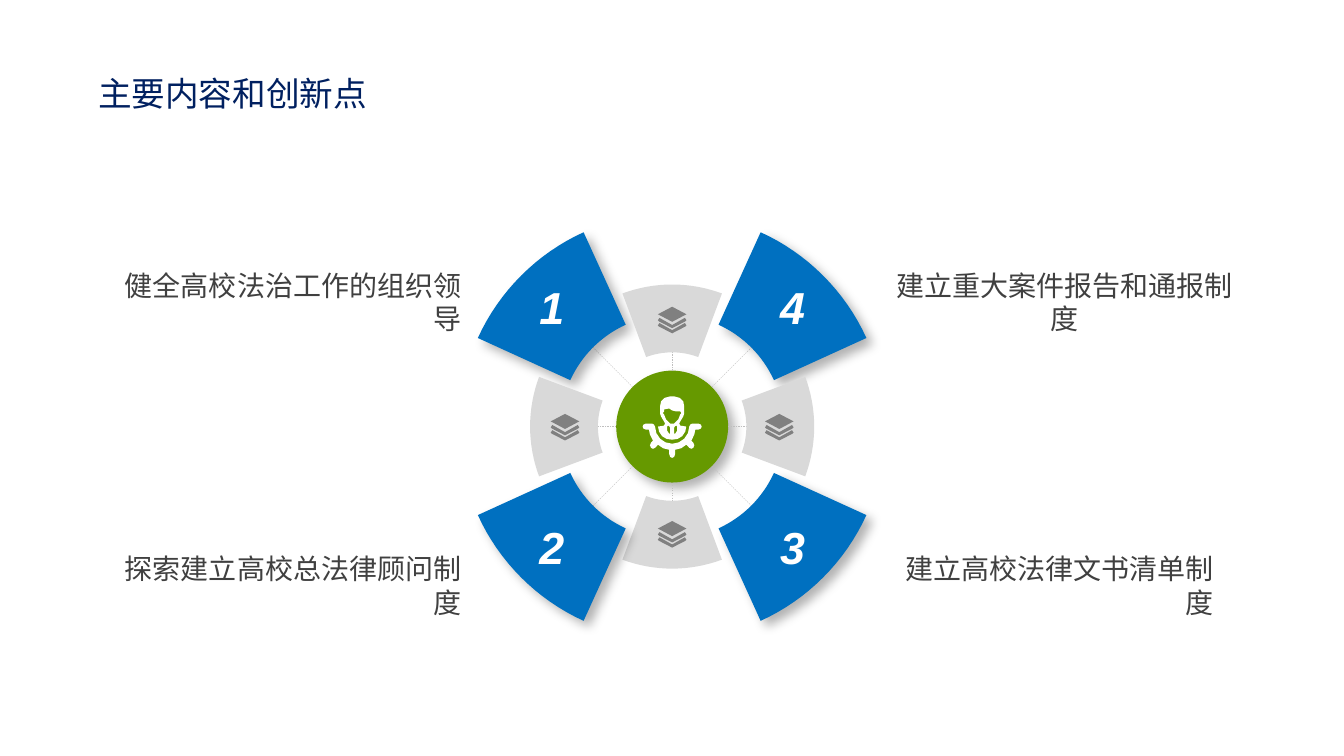
import math
from dataclasses import dataclass

from lxml import etree
from pptx import Presentation
from pptx.dml.color import RGBColor
from pptx.enum import dml, shapes, text
from pptx.oxml import parse_xml
from pptx.oxml.ns import nsdecls, qn
from pptx.util import Cm, Pt

NAVY = RGBColor(0x00, 0x20, 0x60)
BLUE = RGBColor(0x00, 0x70, 0xC0)
GREEN = RGBColor(0x66, 0x99, 0x00)
WHITE = RGBColor(0xFF, 0xFF, 0xFF)
LIGHT_GREY = RGBColor(0xD9, 0xD9, 0xD9)
LINE_GREY = RGBColor(0xBF, 0xBF, 0xBF)
ICON_GREY = RGBColor(0x80, 0x80, 0x80)
TEXT_GREY = RGBColor(0x40, 0x40, 0x40)
CHINESE_FONT = "Noto Sans CJK SC"

# Lengths in centimetres, angles in degrees clockwise from the right
CENTER_X, CENTER_Y = 16.94, 10.75
HUB_RADIUS = 1.41
ICON_RADIUS = 2.7
HALF_ANGLE = 20.5
ARC_STEPS = 16
PILOT_UNIT = 0.0254

Point = tuple[float, float]


@dataclass
class Segment:
    angle: float
    number: str = ""

    @property
    def radii(self) -> Point:
        return (2.82, 5.38) if self.number else (1.87, 3.58)


@dataclass
class Caption:
    words: str
    left: float
    top: float
    width: float
    alignment: text.PP_ALIGN


SEGMENTS = [
    Segment(90), Segment(45, "3"), Segment(135, "2"), Segment(315, "4"),
    Segment(225, "1"), Segment(270), Segment(0), Segment(180),
]
CAPTIONS = [
    Caption("建立重大案件报告和通报制度", 22.01, 6.63, 9.65, text.PP_ALIGN.CENTER),
    Caption("健全高校法治工作的组织领导", 2.23, 6.63, 9.65, text.PP_ALIGN.RIGHT),
    Caption("建立高校法律文书清单制度", 21.89, 13.77, 8.95, text.PP_ALIGN.RIGHT),
    Caption("探索建立高校总法律顾问制度", 2.23, 13.77, 9.65, text.PP_ALIGN.RIGHT),
]

CHEVRON = [(-0.32, -0.04), (0, 0.14), (0.32, -0.04), (0.36, 0.02),
           (0.33, 0.05), (0, 0.22), (-0.33, 0.05), (-0.36, 0.02)]
LAYERS = [
    [(0, -0.32), (0.36, -0.13), (0, 0.06), (-0.36, -0.13)],
    CHEVRON,
    [(x, y + 0.13) for x, y in CHEVRON],
]

# Right halves of the pilot icon, top to bottom
WHEEL_HALF = [
    (0, 17), (6.5, 15.7), (12, 12), (15.7, 6.5), (17, 0), (18, -2), (20, -3),
    (26, -3), (28.5, -2), (29.3, 0), (28.5, 2), (26, 3), (23, 3), (22, 8),
    (19, 14), (21, 16), (22, 18.5), (21, 21), (19, 22), (17, 21), (14, 18),
    (9, 21.5), (3, 23), (3, 27), (2, 30), (0, 31),
]
BODY_HALF = [
    (0, -30), (2, -30), (7.5, -28.5), (11, -25), (12, -20), (12, -13),
    (11, -10), (8, -5), (7, -3), (8, -1), (14, 0), (13, 5), (10, 9.5),
    (5.5, 12.2), (0, 13),
]
FACE = [
    (-3, -18), (-8, -17), (-8, -15), (-9, -14), (-9, -13), (-8, -12), (-6, -7),
    (-2, -3), (2, -3), (6, -7), (8, -12), (9, -13), (9, -14), (8, -15),
    (4, -15), (0, -16),
]
LAPEL = [(2, 1), (3, -0.5), (4, -1), (5, 0), (5, 4), (3, 7), (2, 7)]


def mirrored(points: list[Point]) -> list[Point]:
    return [(-x, y) for x, y in reversed(points)]


def polar(radius: float, angle: float) -> Point:
    """Offset from the centre of the wheel."""
    radians = math.radians(angle)
    return radius * math.cos(radians), radius * math.sin(radians)


def arc(radius: float, start: float, end: float) -> list[Point]:
    step = (end - start) / ARC_STEPS
    return [polar(radius, start + step * i) for i in range(ARC_STEPS + 1)]


def paint(shape, color: RGBColor, shadow: bool = False) -> None:
    shape.fill.solid()
    shape.fill.fore_color.rgb = color
    shape.line.fill.background()
    shape.shadow.inherit = False
    if shadow:
        effects = shape.element.spPr.find(qn("a:effectLst"))
        effects.append(parse_xml(
            f'<a:outerShdw {nsdecls("a")} blurRad="{Pt(8)}" dist="{Pt(6)}" '
            'dir="2700000" algn="tl" rotWithShape="0"><a:srgbClr val="000000">'
            '<a:alpha val="30000"/></a:srgbClr></a:outerShdw>'))


def draw_outline(slide, contours: list[list[Point]], offset: Point = (0, 0)):
    """Draw closed contours placed relative to the wheel centre."""
    def placed(point: Point) -> Point:
        return (Cm(CENTER_X + offset[0] + point[0]),
                Cm(CENTER_Y + offset[1] + point[1]))

    first, *others = contours
    builder = slide.shapes.build_freeform(*placed(first[0]))
    builder.add_line_segments([placed(point) for point in first[1:]])
    for contour in others:
        builder.move_to(*placed(contour[0]))
        builder.add_line_segments([placed(point) for point in contour[1:]])
    return builder.convert_to_shape()


def format_text(paragraph, size: int, color: RGBColor, font: str,
                alignment: text.PP_ALIGN) -> None:
    paragraph.alignment = alignment
    for run in paragraph.runs:
        run.font.size = Pt(size)
        run.font.color.rgb = color
        run.font.name = font
        etree.SubElement(run.font._element, qn("a:ea")).set("typeface", font)


def draw_hub(slide) -> None:
    hub = slide.shapes.add_shape(
        shapes.MSO_SHAPE.OVAL, Cm(CENTER_X - HUB_RADIUS),
        Cm(CENTER_Y - HUB_RADIUS), Cm(2 * HUB_RADIUS), Cm(2 * HUB_RADIUS))
    paint(hub, GREEN, shadow=True)
    contours = [WHEEL_HALF + mirrored(WHEEL_HALF),
                BODY_HALF + mirrored(BODY_HALF), FACE, LAPEL, mirrored(LAPEL)]
    pilot = draw_outline(slide, [
        [(x * PILOT_UNIT, y * PILOT_UNIT) for x, y in contour]
        for contour in contours])
    paint(pilot, WHITE)


def draw_spoke(slide, segment: Segment) -> None:
    start, end = (polar(radius, segment.angle)
                  for radius in (HUB_RADIUS, segment.radii[0]))
    spoke = slide.shapes.add_connector(
        shapes.MSO_CONNECTOR.STRAIGHT,
        Cm(CENTER_X + start[0]), Cm(CENTER_Y + start[1]),
        Cm(CENTER_X + end[0]), Cm(CENTER_Y + end[1]))
    spoke.line.color.rgb = LINE_GREY
    spoke.line.width = Pt(0.25)
    spoke.line.dash_style = dml.MSO_LINE.DASH
    etree.SubElement(spoke.element.spPr, qn("a:effectLst"))


def draw_segment(slide, segment: Segment) -> None:
    inner, outer = segment.radii
    start, end = segment.angle - HALF_ANGLE, segment.angle + HALF_ANGLE
    shape = draw_outline(slide, [arc(outer, start, end) + arc(inner, end, start)])
    if segment.number:
        paint(shape, BLUE, shadow=True)
        shape.text_frame.text = segment.number
        shape.text_frame.vertical_anchor = text.MSO_ANCHOR.MIDDLE
        paragraph = shape.text_frame.paragraphs[0]
        format_text(paragraph, 32, WHITE, "Arial", text.PP_ALIGN.CENTER)
        paragraph.runs[0].font.bold = paragraph.runs[0].font.italic = True
    else:
        paint(shape, LIGHT_GREY)
        paint(draw_outline(slide, LAYERS, polar(ICON_RADIUS, segment.angle)), ICON_GREY)


def draw_caption(slide, caption: Caption) -> None:
    box = slide.shapes.add_textbox(
        Cm(caption.left), Cm(caption.top), Cm(caption.width), Cm(1.1))
    box.text_frame.word_wrap = True
    box.text_frame.text = caption.words
    format_text(box.text_frame.paragraphs[0], 20, TEXT_GREY, CHINESE_FONT, caption.alignment)


def main() -> None:
    presentation = Presentation()
    presentation.slide_width, presentation.slide_height = Cm(33.87), Cm(19.05)
    slide = presentation.slides.add_slide(presentation.slide_layouts[5])
    title = slide.shapes.title
    title.left, title.top, title.width, title.height = Cm(2.22), Cm(1.71), Cm(7.29), Cm(1.28)
    title.text_frame.text = "主要内容和创新点"
    title.text_frame.word_wrap = False
    format_text(title.text_frame.paragraphs[0], 24, NAVY, CHINESE_FONT, text.PP_ALIGN.LEFT)
    draw_hub(slide)
    for segment in SEGMENTS:
        draw_spoke(slide, segment)
    for segment in SEGMENTS:
        draw_segment(slide, segment)
    for caption in CAPTIONS:
        draw_caption(slide, caption)
    presentation.save("out.pptx")


if __name__ == "__main__":
    main()
